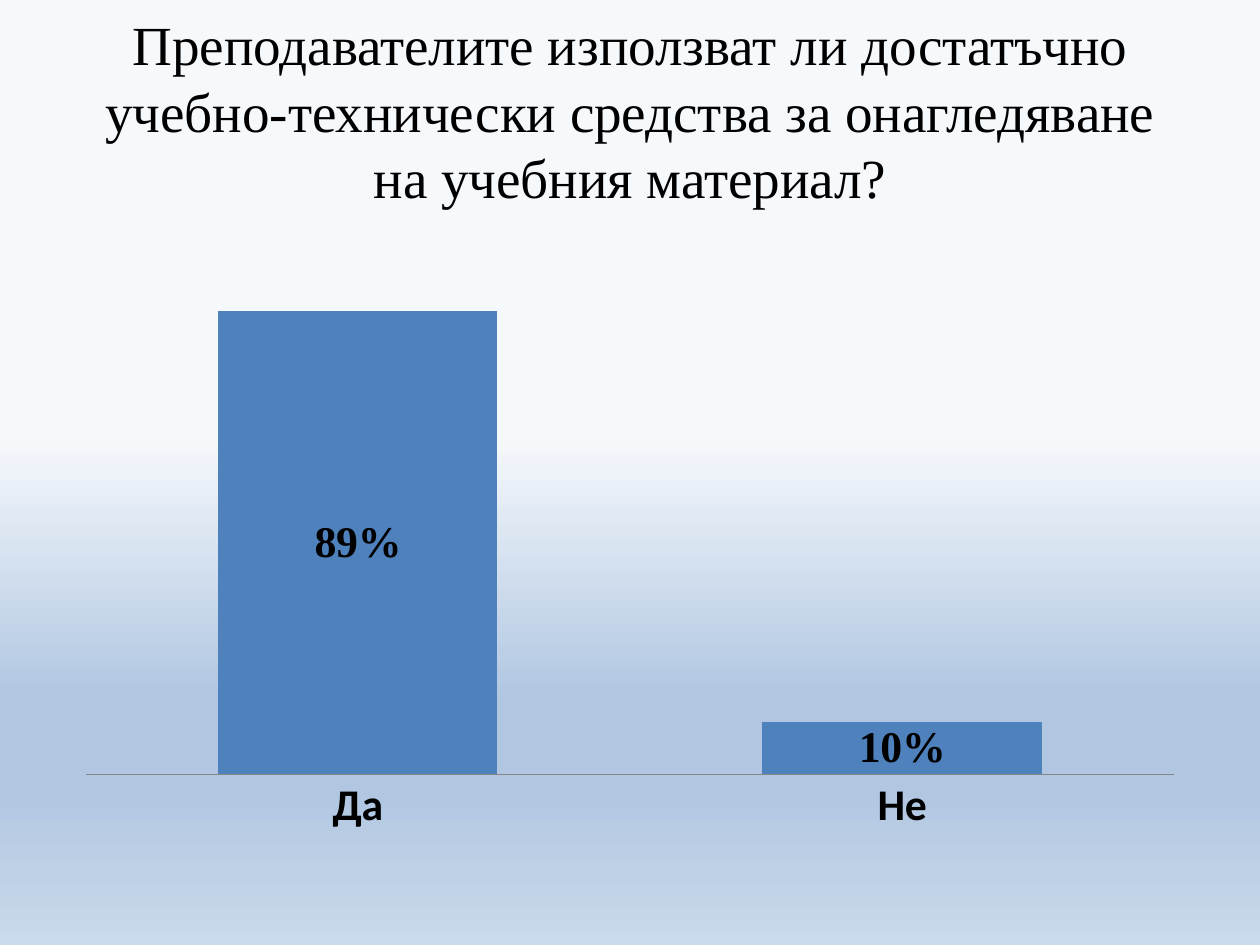
from typing import NamedTuple

from lxml import etree
from pptx import Presentation
from pptx.chart.data import CategoryChartData
from pptx.dml.color import RGBColor
from pptx.enum.chart import XL_CHART_TYPE, XL_LABEL_POSITION, XL_TICK_MARK
from pptx.enum.text import MSO_ANCHOR, MSO_AUTO_SIZE, PP_ALIGN
from pptx.oxml.ns import qn
from pptx.util import Emu, Pt

STACKED = XL_CHART_TYPE.COLUMN_STACKED
MIDDLE = MSO_ANCHOR.MIDDLE
CENTER = PP_ALIGN.CENTER
NO_FIT = MSO_AUTO_SIZE.NONE
NO_TICK = XL_TICK_MARK.NONE
LABEL_MID = XL_LABEL_POSITION.CENTER

SCALE = 914400 / 126
TITLE_ONLY = 5
SERIF, SANS = "Times New Roman", "Calibri"
COLORS = {
    "text": "000000",
    "bar": "4F81BD",
    "axis": "868686",
    "pale": "F6F9FC",
    "deep": "B0C6E1",
    "low": "CAD9EB",
}
TITLE = ("Преподавателите използват ли достатъчно учебно-технически "
         "средства за онагледяване на учебния материал?")


class Box(NamedTuple):
    x: int
    y: int
    w: int
    h: int


class Stop(NamedTuple):
    pos: int
    color: str


class Answer(NamedTuple):
    name: str
    share: float


STOPS = [Stop(46, "pale"), Stop(74, "deep"), Stop(83, "deep"), Stop(100, "low")]
ANSWERS = [Answer("Да", 0.89), Answer("Не", 0.1)]


def px(n: int) -> Emu:
    return Emu(round(n * SCALE))


def rgb(key: str) -> RGBColor:
    return RGBColor.from_string(COLORS[key])


def style(font, size: float, face: str, bold: bool = False) -> None:
    font.size = Pt(size)
    font.name = face
    font.bold = bold
    font.color.rgb = rgb("text")


def paint_back(slide, stops: list[Stop]) -> None:
    """Fill the background with a gradient from top to bottom."""
    fill = slide.background.fill
    fill.gradient()
    fill.gradient_angle = 270
    group = next(slide.element.iter(qn("a:gsLst")))
    for old in list(group):
        group.remove(old)
    for stop in stops:
        node = etree.SubElement(group, qn("a:gs"), pos=str(stop.pos * 1000))
        etree.SubElement(node, qn("a:srgbClr"), val=COLORS[stop.color])


def set_title(slide, text: str, box: Box) -> None:
    title = slide.shapes.title
    title.left, title.top, title.width, title.height = map(px, box)
    frame = title.text_frame
    frame.text = text
    frame.word_wrap = True
    frame.auto_size = NO_FIT
    frame.vertical_anchor = MIDDLE
    para = frame.paragraphs[0]
    para.alignment = CENTER
    style(para.font, 31.5, SERIF)


def add_bars(slide, answers: list[Answer], box: Box) -> None:
    data = CategoryChartData(number_format="0%")
    data.categories = [a.name for a in answers]
    data.add_series("Series 1", [a.share for a in answers])
    chart = slide.shapes.add_chart(STACKED, *map(px, box), data).chart
    chart.has_legend = False
    chart.has_title = False
    style(chart.font, 18, SANS)

    cats = chart.category_axis
    cats.major_tick_mark = NO_TICK
    cats.format.line.color.rgb = rgb("axis")
    style(cats.tick_labels.font, 25, SANS, True)

    vals = chart.value_axis
    vals.minimum_scale, vals.maximum_scale = 0, 1
    vals.has_major_gridlines = False
    vals.visible = False

    plot = chart.plots[0]
    plot.gap_width = 95
    plot.overlap = 100
    plot.vary_by_categories = False

    bars = plot.series[0]
    bars.format.fill.solid()
    bars.format.fill.fore_color.rgb = rgb("bar")
    labels = bars.data_labels
    labels.show_value = True
    labels.number_format = "0%"
    labels.number_format_is_linked = False
    labels.position = LABEL_MID
    style(labels.font, 25, SERIF, True)


def main() -> None:
    deck = Presentation()
    deck.slide_width, deck.slide_height = px(1260), px(945)
    slide = deck.slides.add_slide(deck.slide_layouts[TITLE_ONLY])
    paint_back(slide, STOPS)
    set_title(slide, TITLE, Box(63, 0, 1134, 220))
    add_bars(slide, ANSWERS, Box(63, 242, 1134, 602))
    deck.save("out.pptx")


if __name__ == "__main__":
    main()
